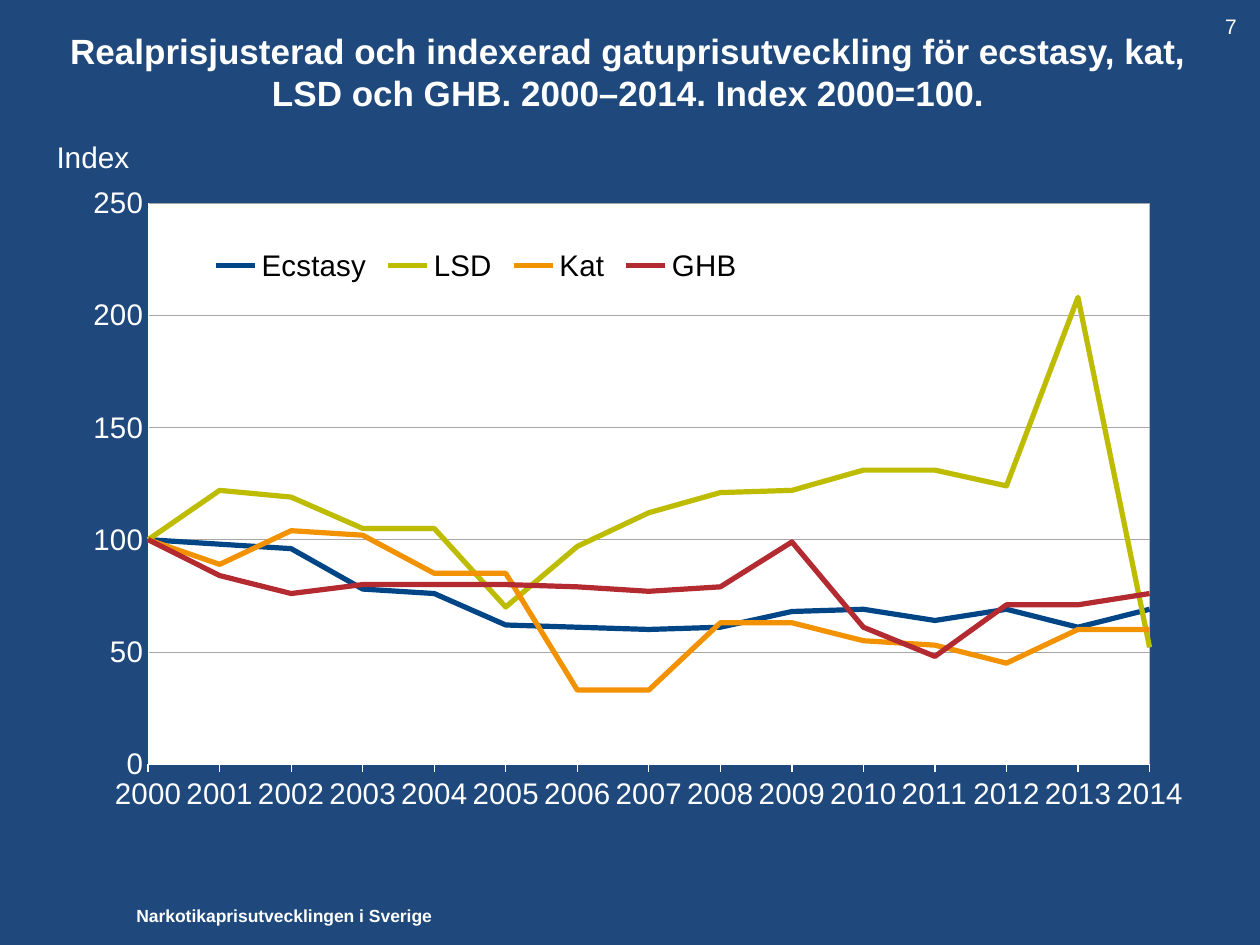
from lxml import etree
from pptx import Presentation
from pptx import util as u
from pptx.chart import data as chart_data
from pptx.dml import color
from pptx.enum import chart as ch, text as tx
from pptx.oxml import ns

Pt = u.Pt


def rgb(value):
    return color.RGBColor.from_string(value)


def write(frame, content, size, bold=False, align=tx.PP_ALIGN.LEFT,
          anchor=tx.MSO_ANCHOR.TOP, indent=7.2):
    frame.word_wrap = True
    frame.auto_size = tx.MSO_AUTO_SIZE.NONE
    frame.vertical_anchor = anchor
    frame.margin_left = Pt(indent)
    paragraph = frame.paragraphs[0]
    paragraph.alignment = align
    run = paragraph.add_run()
    run.text = content
    run.font.name = "Arial"
    run.font.size = Pt(size)
    run.font.bold = bold
    run.font.color.rgb = rgb("FFFFFF")


deck = Presentation()
deck.slide_width, deck.slide_height = Pt(720), Pt(540)
slide = deck.slides.add_slide(deck.slide_layouts[5])
slide.background.fill.solid()
slide.background.fill.fore_color.rgb = rgb("1F497D")

heading = slide.shapes.title
heading.left, heading.top, heading.width, heading.height = Pt(15), Pt(5), Pt(688), Pt(72)
write(heading.text_frame,
      "Realprisjusterad och indexerad gatuprisutveckling för ecstasy, kat, "
      "LSD och GHB. 2000–2014. Index 2000=100.",
      20, bold=True, align=tx.PP_ALIGN.CENTER, anchor=tx.MSO_ANCHOR.MIDDLE)

prices = {
    "Ecstasy": ("004687", [100, 98, 96, 78, 76, 62, 61, 60, 61, 68, 69, 64, 69, 61, 69]),
    "LSD": ("BEBC00", [100, 122, 119, 105, 105, 70, 97, 112, 121, 122, 131, 131, 124, 208, 52]),
    "Kat": ("F29200", [100, 89, 104, 102, 85, 85, 33, 33, 63, 63, 55, 53, 45, 60, 60]),
    "GHB": ("B32B31", [100, 84, 76, 80, 80, 80, 79, 77, 79, 99, 61, 48, 71, 71, 76]),
}
price_data = chart_data.CategoryChartData(number_format="0")
price_data.categories = [str(year) for year in range(2000, 2015)]
for drug, (_, index_values) in prices.items():
    price_data.add_series(drug, index_values)

price_chart = slide.shapes.add_chart(ch.XL_CHART_TYPE.LINE, Pt(33.8), Pt(97.2),
                                     Pt(642.2), Pt(377.3), price_data).chart
price_chart.has_title = False
price_chart.font.name = "Arial"
price_chart.font.size = Pt(17)
price_chart.font.color.rgb = rgb("FFFFFF")
price_chart.plots[0].vary_by_categories = False

for series in price_chart.plots[0].series:
    series.smooth = False
    series.marker.style = ch.XL_MARKER_STYLE.NONE
    series.format.line.width = Pt(3)
    series.format.line.color.rgb = rgb(prices[series.name][0])

years, index_axis = price_chart.category_axis, price_chart.value_axis
for axis, tick, width in ((years, ch.XL_TICK_MARK.OUTSIDE, 0.75),
                          (index_axis, ch.XL_TICK_MARK.NONE, 0.25)):
    axis.major_tick_mark = tick
    axis.minor_tick_mark = ch.XL_TICK_MARK.NONE
    axis.format.line.color.rgb = rgb("FFFFFF")
    axis.format.line.width = Pt(width)
    axis.tick_labels.font.name = "Arial"
    axis.tick_labels.font.size = Pt(17)
    axis.tick_labels.font.bold = False
    axis.tick_labels.font.color.rgb = rgb("FFFFFF")
index_axis.minimum_scale, index_axis.maximum_scale, index_axis.major_unit = 0, 250, 50
index_axis.tick_labels.number_format = "0"
index_axis.tick_labels.number_format_is_linked = False
index_axis.has_major_gridlines = True
index_axis.major_gridlines.format.line.color.rgb = rgb("A6A6A6")
index_axis.major_gridlines.format.line.width = Pt(0.25)

price_chart.has_legend = True
legend = price_chart.legend
legend.position = ch.XL_LEGEND_POSITION.TOP
legend.include_in_layout = False
legend.font.name = "Arial"
legend.font.size = Pt(17)
legend.font.bold = False
legend.font.color.rgb = rgb("000000")

chart_space = price_chart._chartSpace
plot_area = chart_space.find(".//" + ns.qn("c:plotArea"))
legend_box = chart_space.find(".//" + ns.qn("c:legend"))
for part, position, target, box in ((plot_area, 0, "inner", (0.08, 0.05, 0.9, 0.85)),
                                    (legend_box, 1, None, (0.13, 0.11, 0.49, 0.07))):
    for old_layout in part.findall(ns.qn("c:layout")):
        part.remove(old_layout)
    layout = etree.Element(ns.qn("c:layout"))
    manual = etree.SubElement(layout, ns.qn("c:manualLayout"))
    settings = [("layoutTarget", target)] if target else []
    settings += [("xMode", "edge"), ("yMode", "edge")] + list(zip("xywh", box))
    for tag, value in settings:
        etree.SubElement(manual, ns.qn("c:" + tag)).set("val", str(value))
    part.insert(position, layout)

between = etree.Element(ns.qn("c:crossBetween"))
between.set("val", "midCat")
plot_area.find(ns.qn("c:valAx")).find(ns.qn("c:majorUnit")).addprevious(between)
plot_fill = etree.SubElement(etree.SubElement(plot_area, ns.qn("c:spPr")), ns.qn("a:solidFill"))
etree.SubElement(plot_fill, ns.qn("a:srgbClr")).set("val", "FFFFFF")

for content, box, style in (
    ("Narkotikaprisutvecklingen i Sverige", (54.7, 513.4, 220, 19.4),
     dict(size=10, bold=True, indent=23.2)),
    ("7", (686.2, 4.3, 32.4, 21.6), dict(size=12, indent=13.8)),
    ("Index", (25.2, 75.6, 73.4, 28.1), dict(size=17, anchor=tx.MSO_ANCHOR.MIDDLE)),
):
    label = slide.shapes.add_textbox(*map(Pt, box))
    write(label.text_frame, content, **style)

deck.save("out.pptx")
